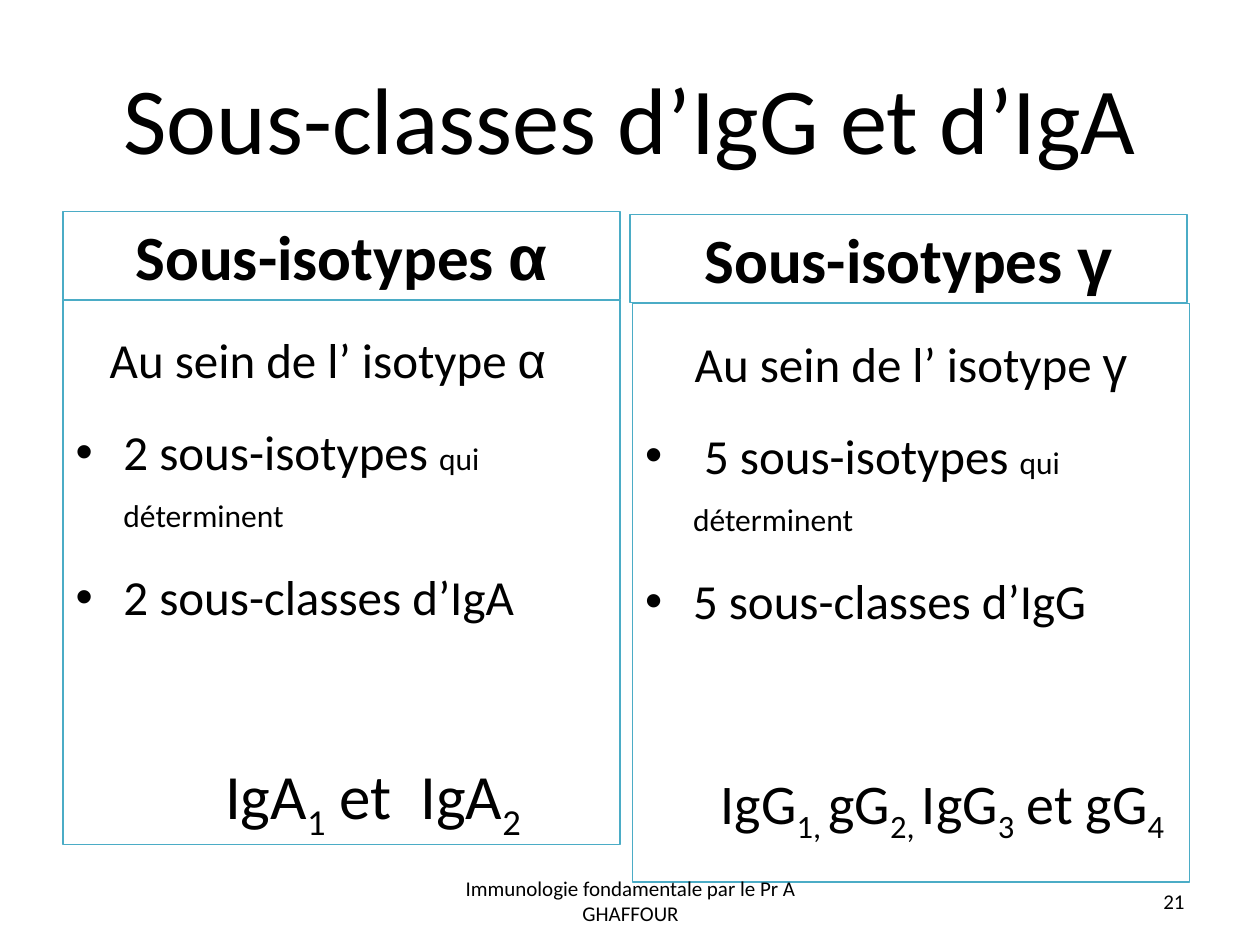
from lxml import etree
from pptx import Presentation, util as u
from pptx.dml.color import RGBColor
from pptx.enum import text
from pptx.oxml.ns import qn

COMPARISON_LAYOUT = 3 + 1
CENTER, LEFT, RIGHT = text.PP_ALIGN.CENTER, text.PP_ALIGN.LEFT, text.PP_ALIGN.RIGHT


def color(value):
    return RGBColor.from_string(value)


class SlideBuilder:
    """Holds the style and the current slide."""
    ink, border = "000000", "4BACC6"
    latin, greek = "Calibri", "Arial"

    def __init__(self, slide):
        self.slide = slide

    def run(self, paragraph, content, size, font=None, bold=False, subscript=False):
        run = paragraph.add_run()
        run.text = content
        run.font.size = u.Pt(size)
        run.font.name = font or self.latin
        run.font.bold = bold
        run.font.color.rgb = color(self.ink)
        if subscript:
            run.font._element.set("baseline", "-25000")

    def place(self, shape, box, anchor):
        shape.left, shape.top, shape.width, shape.height = map(u.Inches, box)
        frame = shape.text_frame
        frame.word_wrap = True
        frame.auto_size = text.MSO_AUTO_SIZE.NONE
        frame.vertical_anchor = anchor
        return frame

    def title(self, content, box):
        frame = self.place(self.slide.shapes.title, box, text.MSO_ANCHOR.MIDDLE)
        frame.paragraphs[0].alignment = CENTER
        self.run(frame.paragraphs[0], content, 54)

    def panel(self, index, box, anchor):
        shape = self.slide.placeholders[index]
        shape.line.color.rgb = color(self.border)
        shape.line.width = u.Pt(0.75)
        return self.place(shape, box, anchor)

    def heading(self, index, box, letter):
        paragraph = self.panel(index, box, text.MSO_ANCHOR.BOTTOM).paragraphs[0]
        paragraph.alignment = CENTER
        self.run(paragraph, "Sous-isotypes ", 36, bold=True)
        self.run(paragraph, letter, 36, self.greek, bold=True)

    def list_paragraph(self, paragraph, bullet, level=0):
        paragraph.level = level
        paragraph.line_spacing = 1.4
        paragraph.alignment = LEFT if bullet else CENTER
        margin, hanging = ((0.38, 0.38), (0.81, 0.31))[level]
        properties = paragraph._p.get_or_add_pPr()
        properties.set("marL", str(u.Inches(margin)))
        properties.set("indent", str(-u.Inches(hanging)))
        if not bullet:
            etree.SubElement(properties, qn("a:buNone"))
        return paragraph

    def details(self, index, box, letter, subtypes, subclasses, members, size, gap):
        frame = self.panel(index, box, text.MSO_ANCHOR.TOP)
        intro = self.list_paragraph(frame.paragraphs[0], False)
        self.run(intro, "Au sein de l’ isotype ", 28)
        self.run(intro, letter, 28, self.greek)

        first = self.list_paragraph(frame.add_paragraph(), True)
        self.run(first, subtypes, 28)
        self.run(first, "qui déterminent", 18)
        second = self.list_paragraph(frame.add_paragraph(), True)
        self.run(second, subclasses, 28)

        # Names alternate with their subscripts
        summary = self.list_paragraph(frame.add_paragraph(), False, level=1)
        summary.space_before = u.Pt(gap)
        for position, part in enumerate(members):
            self.run(summary, part, size, subscript=position % 2 == 1)

    def footer(self, content, box, alignment):
        shape = self.slide.shapes.add_textbox(*map(u.Inches, box))
        frame = self.place(shape, box, text.MSO_ANCHOR.MIDDLE)
        frame.paragraphs[0].alignment = alignment
        self.run(frame.paragraphs[0], content, 12)


def main():
    presentation = Presentation()
    presentation.slide_width, presentation.slide_height = u.Inches(10), u.Inches(7.5)
    layout = presentation.slide_layouts[COMPARISON_LAYOUT]
    builder = SlideBuilder(presentation.slides.add_slide(layout))
    builder.title("Sous-classes d’IgG et d’IgA", (0.5, 0.3, 9, 1.25))

    # IgA column
    builder.heading(1, (0.5, 1.68, 4.42, 0.7), "α")
    builder.details(2, (0.5, 2.38, 4.42, 4.32), "α  ", "2 sous-isotypes ",
                    "2 sous-classes d’IgA", ("IgA", "1", " et  IgA", "2"), 36, 55)

    # IgG column
    builder.heading(3, (5, 1.7, 4.42, 0.7), "γ")
    builder.details(4, (5.02, 2.41, 4.42, 4.59), "γ", " 5 sous-isotypes ",
                    "5 sous-classes d’IgG",
                    ("IgG", "1, ", "gG", "2, ", "IgG", "3", " et gG", "4"), 32, 62)

    # Footer and page number
    builder.footer("Immunologie fondamentale par le Pr A GHAFFOUR",
                   (3.42, 6.95, 3.17, 0.4), CENTER)
    builder.footer("21", (7.17, 6.95, 2.33, 0.4), RIGHT)
    presentation.save("out.pptx")


if __name__ == "__main__":
    main()
